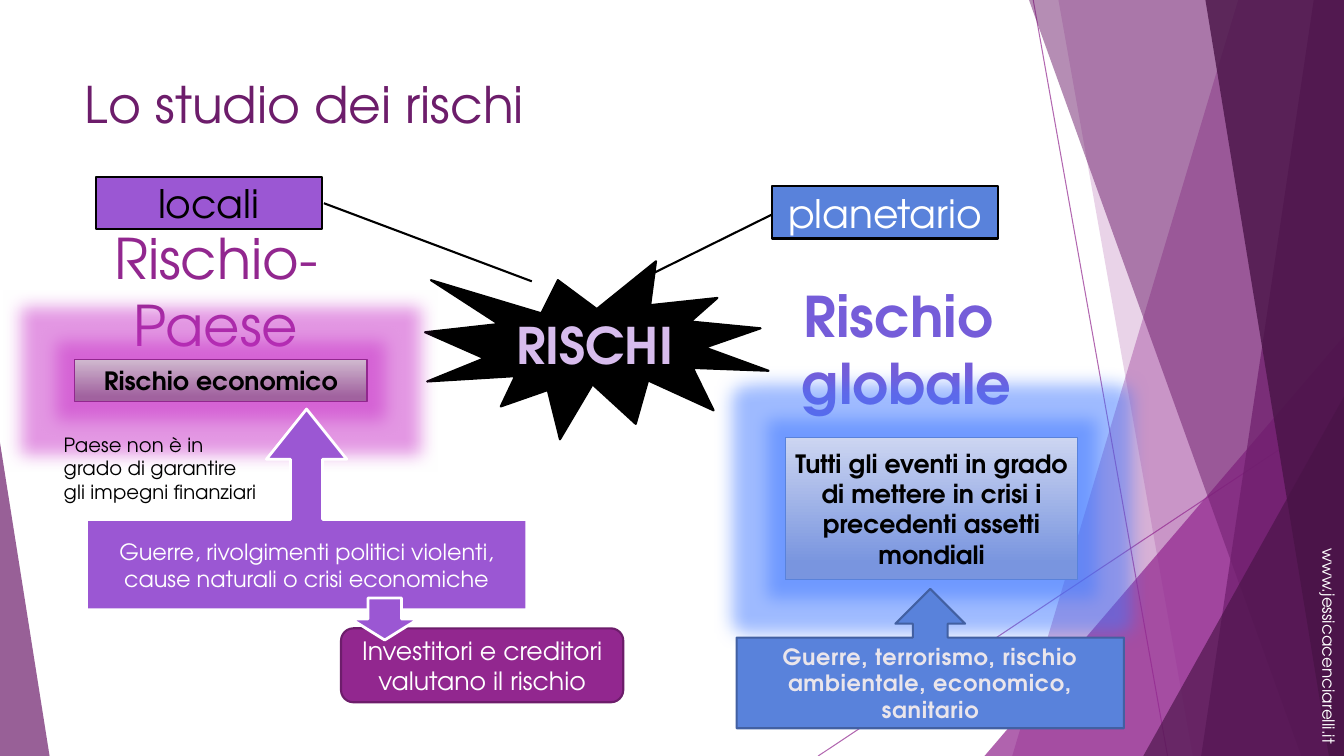
from lxml import etree
from pptx import Presentation
from pptx import util as u
from pptx.dml.color import RGBColor
from pptx.enum import shapes, text
from pptx.oxml import parse_xml
from pptx.oxml.ns import nsdecls, qn

FONT = "TeX Gyre Adventor"
WHITE, BLACK = RGBColor(255, 255, 255), RGBColor(0, 0, 0)
MAGENTA = RGBColor(0x92, 0x27, 0x8F)
PLUM = RGBColor(0x6D, 0x1D, 0x6B)
DARK_PLUM = RGBColor(0x49, 0x14, 0x47)
VIOLET = RGBColor(0x9B, 0x57, 0xD3)
LILAC = RGBColor(0xD7, 0xBC, 0xED)
INDIGO = RGBColor(0x75, 0x5D, 0xD9)
BLUE = RGBColor(0x59, 0x82, 0xDB)
NAVY = RGBColor(0x42, 0x60, 0xA2)
PALE = RGBColor(0xEA, 0xE5, 0xEB)
MAUVE = (RGBColor(0xD0, 0xB9, 0xCF), RGBColor(0xA1, 0x62, 0x9F))
SKY = (RGBColor(0xCC, 0xD5, 0xF1), RGBColor(0x79, 0x95, 0xDF))
PINK_GLOW, BLUE_GLOW = RGBColor(0xC8, 0x30, 0xC8), RGBColor(0x40, 0x78, 0xFF)

# The slide is a grid of 160 columns by 90 rows
prs = Presentation()
prs.slide_width, prs.slide_height = u.Inches(13.333), u.Inches(7.5)
CELL = prs.slide_height / 90
s = prs.slides.add_slide(prs.slide_layouts[5])
MSO = shapes.MSO_SHAPE
CENTER, LEFT = text.PP_ALIGN.CENTER, text.PP_ALIGN.LEFT


def grid(*cells):
    return [round(c * CELL) for c in cells]


def write(sp, lines, size, color, bold=False, align=CENTER, wrap=True,
          anchor=text.MSO_ANCHOR.MIDDLE):
    tf = sp.text_frame
    tf.auto_size = text.MSO_AUTO_SIZE.NONE
    tf.word_wrap, tf.vertical_anchor = wrap, anchor
    for i, line in enumerate(lines.split("\n")):
        p = tf.add_paragraph() if i else tf.paragraphs[0]
        p.alignment = align
        r = p.add_run()
        r.text = line
        for name, value in dict(name=FONT, size=u.Pt(size), bold=bold).items():
            setattr(r.font, name, value)
        r.font.color.rgb = color


# Background lines
for x1, y1, x2, y2 in [(123, 0, 139, 90), (160, 48.4, 97.4, 90)]:
    ray = s.shapes.add_connector(shapes.MSO_CONNECTOR.STRAIGHT, *grid(x1, y1, x2, y2))
    ray.line.color.rgb, ray.line.width = MAGENTA, u.Pt(0.75)
    color = ray.line._ln.find(".//" + qn("a:srgbClr"))
    etree.SubElement(color, qn("a:alpha"), val="70000")
    etree.SubElement(ray._element.spPr, qn("a:effectLst"))

# Background facets: (top x, bottom x) of a panel reaching the right edge,
# or (box, apex) of a triangle
for place, color, opacity in [
    ((147.4, 120.5), MAGENTA, 36),
    ((126, 142), MAGENTA, 20),
    (((117.2, 40, 42.8, 50), 1), MAGENTA, 72),
    ((122.5, 154.9), PLUM, 50),
    ((156.4, 143), PLUM, 70),
    ((143.5, 158.2), DARK_PLUM, 80),
    (((136.1, 47.2, 23.9, 42.8), 1), DARK_PLUM, 66),
    (((0, 52.7, 5.9, 37.3), 0), PLUM, 70),
]:
    first, second = place
    if isinstance(first, tuple):
        sp = s.shapes.add_shape(MSO.ISOSCELES_TRIANGLE, *grid(*first))
        sp.adjustments[0] = second
    else:
        fb = s.shapes.build_freeform(*grid(first, 0))
        fb.add_line_segments([grid(160, 0), grid(160, 90), grid(second, 90)])
        sp = fb.convert_to_shape()
    sp.shadow.inherit = False
    sp.line.fill.background()
    sp.fill.solid()
    sp.fill.fore_color.rgb = color
    srgb = sp._element.spPr.find(".//" + qn("a:srgbClr"))
    etree.SubElement(srgb, qn("a:alpha"), val=str(opacity * 1000))

# Web address along the right edge
web = s.shapes.add_textbox(*grid(145.1, 75.1, 26.2, 3.6))
web.rotation = 90
write(web, "www.jessicacenciarelli.it", 12, WHITE, wrap=False)

# Title
title = s.shapes.title
title.left, title.top, title.width, title.height = grid(8.9, 8, 112.8, 8.6)
write(title, "Lo studio dei rischi", 36, PLUM, align=LEFT)

# Diagram, back to front: kind, box, adjustments, fill, line, text
TOP = text.MSO_ANCHOR.TOP
for kind, box, adj, fill, line, words in [
    (MSO.EXPLOSION1, (50.6, 31.1, 40.9, 21.2), (), BLACK, (BLACK, 1.5),
     ("RISCHI", 36, LILAC, True)),
    (MSO.LINE_CALLOUT_1, (11.4, 21.1, 26.9, 6.2), (2, 1.93, 0.5, 1.01),
     VIOLET, (BLACK, 1.5), ("locali", 28, BLACK)),
    (MSO.LINE_CALLOUT_1, (91.9, 22.2, 26.9, 6.2), (1.87, -0.62, 0.54, 0),
     BLUE, (BLACK, 1.5), ("planetario", 28, WHITE)),
    (None, (7.2, 26, 37, 17.4), (), None, None,
     ("Rischio-Paese", 40, MAGENTA, False, CENTER, True, TOP)),
    (None, (94.1, 32.9, 27.6, 17.4), (), None, None,
     ("Rischio \nglobale", 40, INDIGO, True, CENTER, False, TOP)),
    (MSO.RECTANGLE, (8.9, 42.8, 34.8, 5), (), MAUVE, (MAGENTA, 1),
     ("Rischio economico", 18, BLACK, True)),
    (MSO.UP_ARROW_CALLOUT, (10.3, 48.7, 52.4, 23.9), (0.16, 0.2, 0.25, 0.45),
     VIOLET, (WHITE, 2),
     ("Guerre, rivolgimenti politici violenti, cause naturali o crisi economiche",
      16, WHITE)),
    (MSO.ROUNDED_RECTANGLE, (40.6, 74.8, 33.6, 8.8), (), MAGENTA, (PLUM, 1.5),
     ("Investitori e creditori valutano il rischio", 18, WHITE)),
    (MSO.RECTANGLE, (93.5, 52.1, 34.8, 16.9), (), SKY, (BLUE, 1),
     ("Tutti gli eventi in grado di mettere in crisi i precedenti assetti mondiali",
      18, BLACK, True)),
    (MSO.UP_ARROW_CALLOUT, (87.7, 70.1, 46.1, 16.6), (), BLUE, (NAVY, 1.5),
     ("Guerre, terrorismo, rischio ambientale, economico, sanitario",
      16, PALE, True)),
    (MSO.DOWN_ARROW, (41.8, 71.2, 8, 5), (), VIOLET, (WHITE, 2), None),
    (None, (6.4, 50.9, 25.4, 9.7), (), None, None,
     ("Paese non è in grado di garantire gli impegni finanziari",
      14, BLACK, False, LEFT, True, TOP)),
]:
    if kind is None:
        sp = s.shapes.add_textbox(*grid(*box))
    else:
        sp = s.shapes.add_shape(kind, *grid(*box))
        sp.shadow.inherit = False
        sp.line.color.rgb, sp.line.width = line[0], u.Pt(line[1])
        for i, value in enumerate(adj):
            sp.adjustments[i] = value
        if fill in (MAUVE, SKY):
            # Gradient boxes glow
            sp.fill.gradient()
            sp.fill.gradient_angle = 270
            for stop, color, position in zip(sp.fill.gradient_stops, fill, (0, 0.88)):
                stop.color.rgb, stop.position = color, position
            glow = PINK_GLOW if fill == MAUVE else BLUE_GLOW
            sp._element.spPr.find(qn("a:effectLst")).append(parse_xml(
                f'<a:glow {nsdecls("a")} rad="{u.Inches(0.35)}"><a:srgbClr val="{glow}">'
                '<a:alpha val="50000"/></a:srgbClr></a:glow>'))
        else:
            sp.fill.solid()
            sp.fill.fore_color.rgb = fill
    if words:
        write(sp, *words)
    if kind == MSO.EXPLOSION1:
        # Outlined letters
        r = sp.text_frame.paragraphs[0].runs[0]
        r.font._element.insert(0, parse_xml(
            f'<a:ln {nsdecls("a")} w="{u.Pt(1.75)}"><a:solidFill>'
            f'<a:srgbClr val="{VIOLET}"/></a:solidFill></a:ln>'))
    if words and words[2] == PALE:
        # Slightly spaced letters
        sp.text_frame.paragraphs[0].runs[0].font._element.set("spc", "50")

prs.save("out.pptx")
